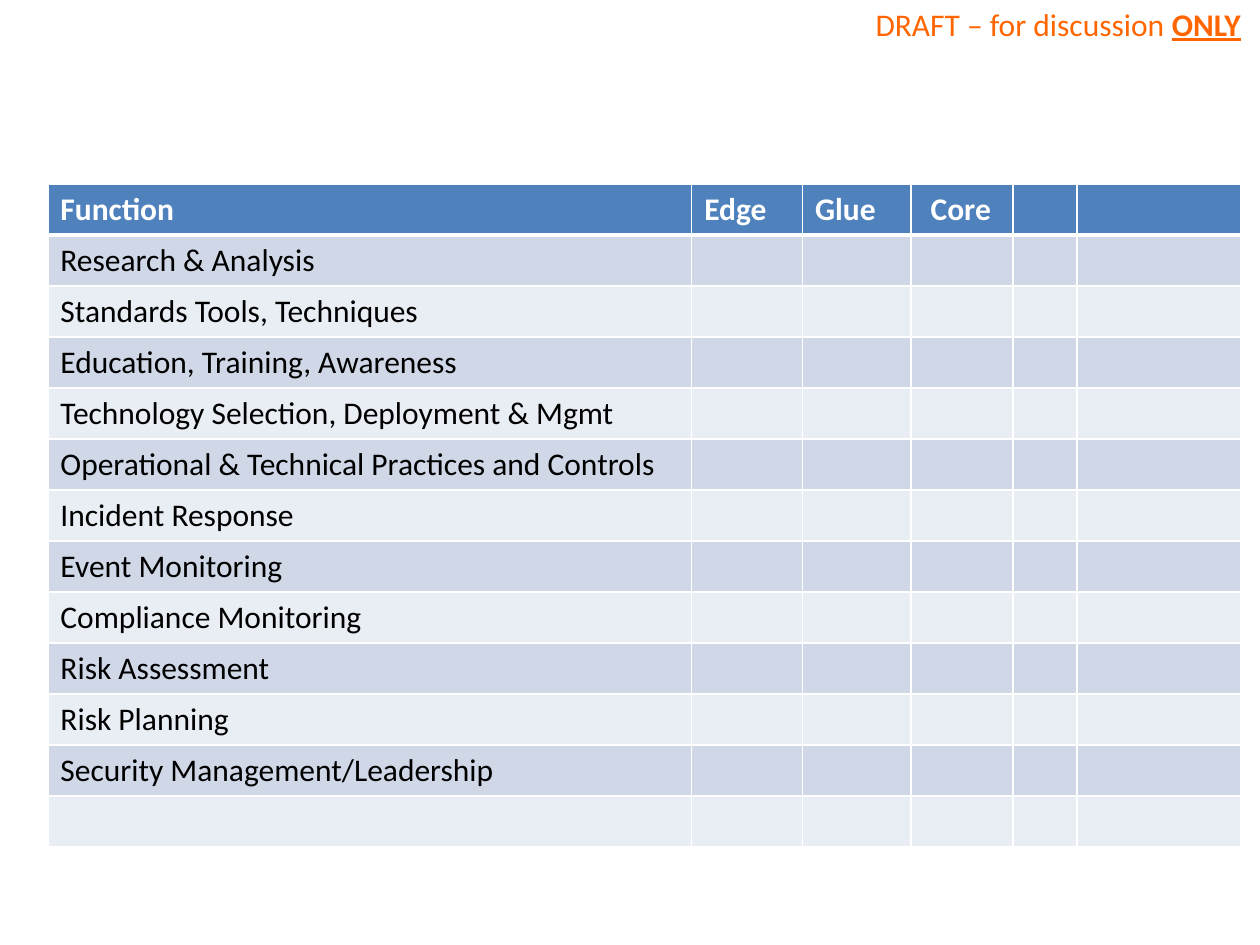
from dataclasses import dataclass

from lxml import etree
from pptx import Presentation
from pptx import util as u
from pptx.dml.color import RGBColor
from pptx.enum import text
from pptx.oxml.ns import qn


@dataclass(frozen=True)
class Theme:
    font: str = "Calibri"
    size: int = 18
    draft: str = "FF6600"
    header: str = "4F81BD"
    header_text: str = "FFFFFF"
    body_text: str = "000000"
    bands: tuple = ("D0D8E8", "E9EDF4")
    rule: str = "FFFFFF"
    thin: int = 1
    thick: int = 3


THEME = Theme()
WIDTH, HEIGHT = u.Inches(10), u.Inches(7.5)
COLUMNS = (5.11, 0.88, 0.86, 0.81, 0.51, 1.3)  # inches
ROW_HEIGHT = 0.405
HEADINGS = ("Function", "Edge", "Glue", " Core", "", "")
FUNCTIONS = (
    "Research & Analysis",
    "Standards Tools, Techniques",
    "Education, Training, Awareness",
    "Technology Selection, Deployment & Mgmt",
    "Operational & Technical Practices and Controls",
    "Incident Response",
    "Event Monitoring",
    "Compliance Monitoring",
    "Risk Assessment",
    "Risk Planning",
    "Security Management/Leadership",
    "",
)


def add_run(paragraph, words, color, **extra):
    run = paragraph.add_run()
    run.text = words
    formats = {"name": THEME.font, "size": u.Pt(THEME.size), **extra}
    for name, value in formats.items():
        setattr(run.font, name, value)
    run.font.color.rgb = RGBColor.from_string(color)


def add_draft_note(slide):
    box = slide.shapes.add_textbox(
        int(WIDTH * 0.685), u.Inches(-0.01), int(WIDTH * 0.315), u.Inches(0.4))
    frame = box.text_frame
    frame.word_wrap = False
    frame.auto_size = text.MSO_AUTO_SIZE.SHAPE_TO_FIT_TEXT
    paragraph = frame.paragraphs[0]
    add_run(paragraph, "DRAFT – for discussion ", THEME.draft)
    add_run(paragraph, "ONLY", THEME.draft, bold=True, underline=True)


def set_borders(cell, top, bottom):
    """Draw the four cell borders; they must come before the fill."""
    properties = cell._tc.get_or_add_tcPr()
    widths = {"a:lnL": THEME.thin, "a:lnR": THEME.thin, "a:lnT": top, "a:lnB": bottom}
    for position, (tag, width) in enumerate(widths.items()):
        line = etree.Element(qn(tag), w=str(u.Pt(width)))
        fill = etree.SubElement(line, qn("a:solidFill"))
        etree.SubElement(fill, qn("a:srgbClr"), val=THEME.rule)
        properties.insert(position, line)


def format_cell(cell, words, row):
    is_header = row == 0
    fill = THEME.header if is_header else THEME.bands[(row - 1) % 2]
    color = THEME.header_text if is_header else THEME.body_text
    cell.fill.solid()
    cell.fill.fore_color.rgb = RGBColor.from_string(fill)
    set_borders(cell,
                top=THEME.thick if row == 1 else THEME.thin,
                bottom=THEME.thick if is_header else THEME.thin)
    if words:
        add_run(cell.text_frame.paragraphs[0], words, color, bold=is_header)


def add_function_table(slide):
    blanks = ("",) * (len(COLUMNS) - 1)
    rows = [HEADINGS] + [(function, *blanks) for function in FUNCTIONS]
    table = slide.shapes.add_table(
        len(rows), len(COLUMNS), u.Inches(0.38), u.Inches(1.46),
        u.Inches(sum(COLUMNS)), u.Inches(ROW_HEIGHT * len(rows))).table
    for column, width in zip(table.columns, COLUMNS):
        column.width = u.Inches(width)
    for row, values in enumerate(rows):
        table.rows[row].height = u.Inches(ROW_HEIGHT)
        for column, words in enumerate(values):
            format_cell(table.cell(row, column), words, row)


def main():
    presentation = Presentation()
    presentation.slide_width, presentation.slide_height = WIDTH, HEIGHT
    # The slide has no title, so it uses the blank layout
    slide = presentation.slides.add_slide(presentation.slide_layouts[6])
    add_draft_note(slide)
    add_function_table(slide)
    presentation.save("out.pptx")


if __name__ == "__main__":
    main()
